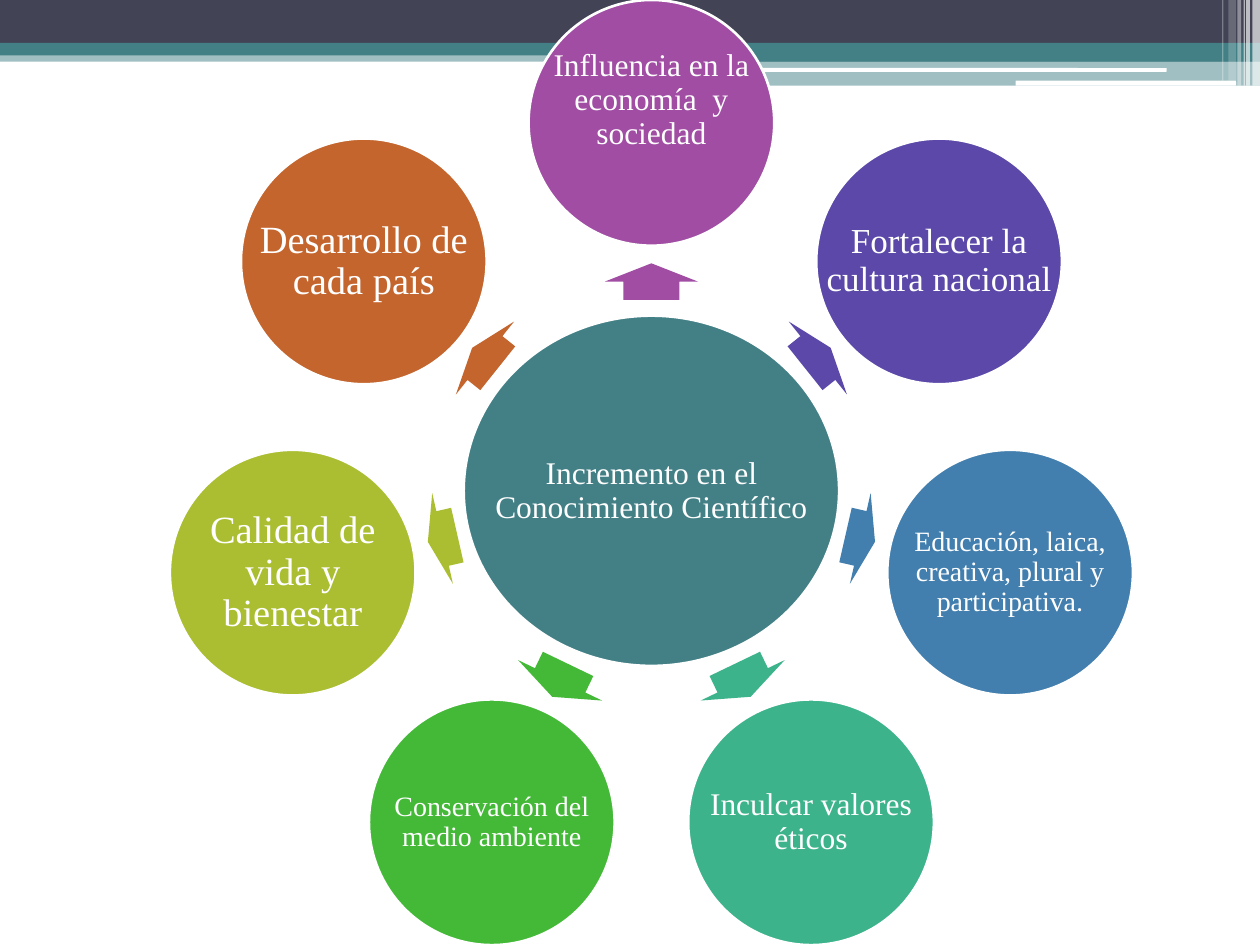
import math
import pptx
import pptx.util
import pptx.dml.color
import pptx.enum.shapes
import pptx.enum.text
import pptx.oxml
import pptx.oxml.ns

Inches = pptx.util.Inches
Pt = pptx.util.Pt
KIND = pptx.enum.shapes.MSO_SHAPE

COLORS = {
    "white": "FFFFFF", "dark": "424456", "teal": "438086",
    "purple": "A04DA3", "violet": "5B48A8", "blue": "427FAE", "mint": "3DB38C",
    "green": "44B938", "lime": "ABBE32", "orange": "C4652D",
}

# text, color, font size, arrow length, arrow distance from the hub; clockwise
NODES = [
    ("Influencia en la economía  y sociedad", "purple", 18, 0.29, 1.66),
    ("Fortalecer la cultura nacional", "violet", 20, 0.26, 1.69),
    ("Educación, laica, creativa, plural y participativa.", "blue", 16, 0.24, 1.7),
    ("Inculcar valores éticos", "mint", 18, 0.29, 1.67),
    ("Conservación del medio ambiente", "green", 16, 0.29, 1.67),
    ("Calidad de vida y bienestar", "lime", 22, 0.24, 1.7),
    ("Desarrollo de cada país", "orange", 22, 0.26, 1.69),
]


def rgb(name):
    return pptx.dml.color.RGBColor.from_string(COLORS[name])


def add_form(slide, kind, box, color, alpha=100):
    """Add a filled shape without outline; alpha is its opacity in percent."""
    form = slide.shapes.add_shape(kind, *map(Inches, box))
    form.shadow.inherit = False
    form.fill.solid()
    form.fill.fore_color.rgb = rgb(color)
    form.line.fill.background()
    if alpha < 100:
        tone = form.fill._xPr.find(".//" + pptx.oxml.ns.qn("a:srgbClr"))
        tone.append(pptx.oxml.parse_xml(
            f'<a:alpha {pptx.oxml.ns.nsdecls("a")} val="{alpha * 1000}"/>'))
    return form


def add_disc(slide, box, color, text, size, lift=0):
    """Add a circle with a label as wide as it; lift raises the label."""
    disc = add_form(slide, KIND.OVAL, box, color)
    disc.line.color.rgb = rgb("white")
    disc.line.width = Pt(1.5)
    frame = slide.shapes.add_textbox(*map(Inches, box)).text_frame
    frame.word_wrap = True
    frame.vertical_anchor = pptx.enum.text.MSO_ANCHOR.MIDDLE
    frame.margin_left = frame.margin_right = frame.margin_top = Inches(0.03)
    frame.margin_bottom = Inches(0.03 + 2 * lift)
    para = frame.paragraphs[0]
    para.text = text
    para.alignment = pptx.enum.text.PP_ALIGN.CENTER
    para.line_spacing = 0.9
    para.font.name = "Times New Roman"
    para.font.size = Pt(size)
    para.font.color.rgb = rgb("white")


def add_band(slide, left, top, width):
    """Draw the header stripes and the light bars at their right end."""
    right = left + width
    stripes = [
        (0, 0.4, 10, 0.09, "teal", 50), (0, 0, 10, 0.34, "dark", 100),
        (0, 0.34, 10, 0.1, "teal", 100), (5.92, 0.39, 4.08, 0.1, "teal", 100),
        (5.92, 0.48, 4.08, 0.2, "teal", 50),
    ]
    for x, y, wide, high, color, alpha in stripes:
        add_form(slide, KIND.RECTANGLE, (left + x, top + y, wide, high), color, alpha)
    for x, y, wide, high in [(5.91, 0.54, 3.35, 0.03), (8.06, 0.64, 1.75, 0.04)]:
        add_form(slide, KIND.ROUNDED_RECTANGLE, (left + x, top + y, wide, high), "white")
    bars = [
        (0.06, 0.06, 0.68, 65), (0.11, 0.03, 0.68, 65), (0.13, 0.01, 0.68, 60),
        (0.18, 0.03, 0.68, 40), (0.25, 0.06, 0.64, 20), (0.3, 0.01, 0.64, 30),
    ]
    for back, wide, high, alpha in bars:
        add_form(slide, KIND.RECTANGLE, (right - back, top, wide, high), "white", alpha)


def add_wheel(slide, left, top, width, height):
    """Draw the hub, with a ring of circles and arrows pointing out to them."""
    disc, ring, broad = 1.95, 2.92, 0.74
    hub_w, hub_h = 2.98, 2.78
    mid_x, mid_y = left + width / 2, top + disc / 2 + ring

    def around(angle, reach, wide, high):
        x = mid_x + reach * math.cos(math.radians(angle))
        y = mid_y + reach * math.sin(math.radians(angle))
        return x - wide / 2, y - high / 2, wide, high

    add_disc(slide, around(0, 0, hub_w, hub_h), "teal",
             "Incremento en el Conocimiento Científico", 18)
    for spot, (text, color, size, length, reach) in enumerate(NODES):
        angle = 270 + spot * 360 / len(NODES)
        arrow = add_form(slide, KIND.RIGHT_ARROW,
                         around(angle, reach, length, broad), color)
        arrow.adjustments[0] = 0.6
        arrow.adjustments[1] = 0.5
        arrow.rotation = angle % 360
        add_disc(slide, around(angle, ring, disc, disc), color, text, size,
                 lift=0.18 if spot == 0 else 0)


def main():
    deck = pptx.Presentation()
    deck.slide_width, deck.slide_height = Inches(10), Inches(7.5)
    slide = deck.slides.add_slide(deck.slide_layouts[6])
    add_band(slide, 0, 0, 10)
    add_wheel(slide, 1.35, 0, 7.64, 7.5)
    deck.save("out.pptx")


if __name__ == "__main__":
    main()
